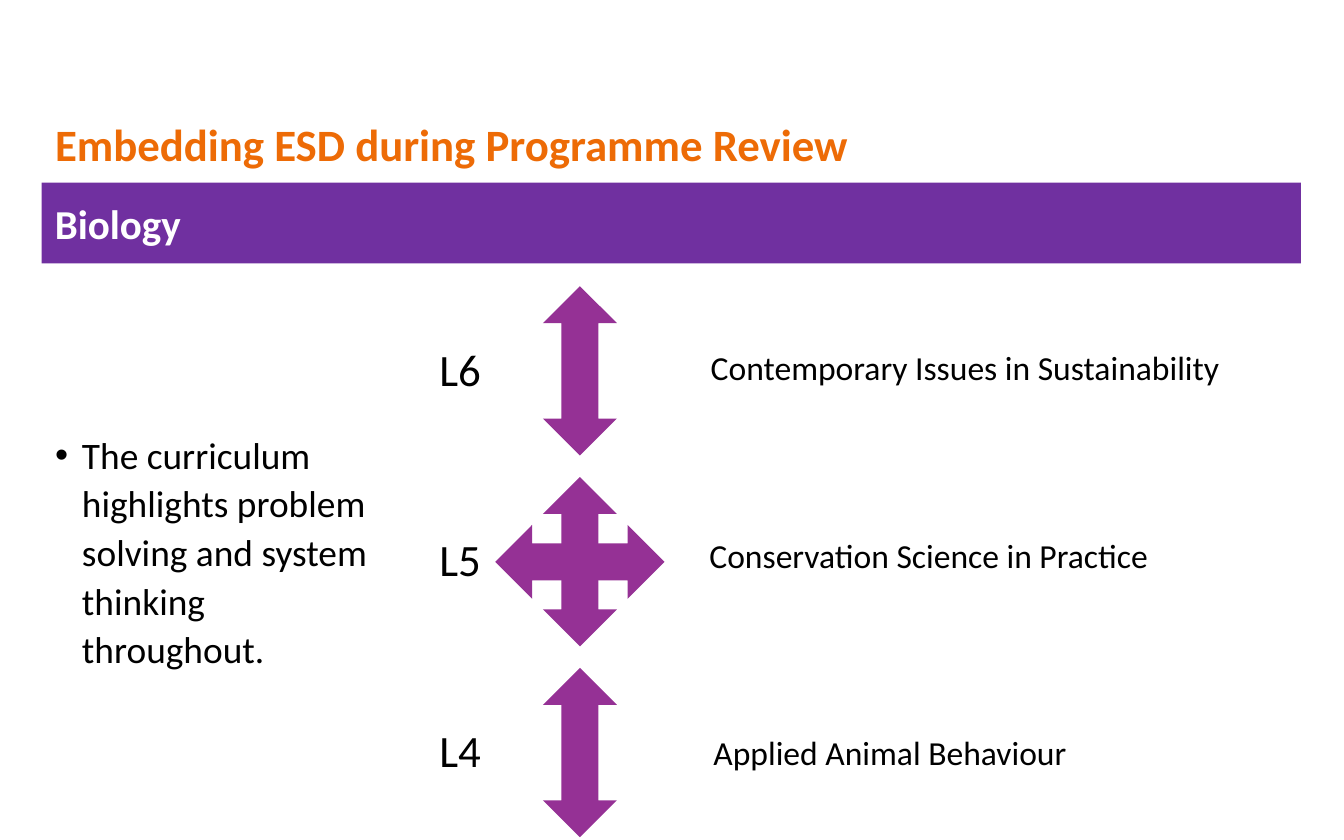
from dataclasses import dataclass

from lxml import etree
from pptx import Presentation
from pptx import util as u
from pptx.dml.color import RGBColor
from pptx.enum import shapes, text
from pptx.oxml import ns
from pptx.shapes.autoshape import Shape
from pptx.slide import Slide


@dataclass(frozen=True)
class Theme:
    font: str = "Calibri"
    orange: str = "ED6B06"
    purple: str = "7030A0"
    arrow: str = "953195"
    white: str = "FFFFFF"
    black: str = "000000"
    title_size: int = 24
    band_size: int = 22
    level_size: int = 24
    module_size: int = 18
    body_size: int = 20


@dataclass(frozen=True)
class Level:
    name: str
    module: str
    module_left: float
    module_top: float
    module_width: float
    sideways: bool = False


THEME = Theme()
LEVELS = [
    Level("L6", "Contemporary Issues in Sustainability", 5.19, 2.53, 4.03),
    Level("L5", "Conservation Science in Practice", 5.18, 3.93, 3.51, sideways=True),
    Level("L4", "Applied Animal Behaviour", 5.21, 5.4, 3.35),
]
LEVEL_PITCH = 1.42
FIRST_ARROW_TOP = 2.13
FIRST_NAME_TOP = 2.49


def place(shape: Shape, left: float, top: float, width: float, height: float) -> None:
    shape.left, shape.top = u.Inches(left), u.Inches(top)
    shape.width, shape.height = u.Inches(width), u.Inches(height)


def write(shape: Shape, words: str, size: int, color: str, bold: bool = False) -> None:
    """Set one left-aligned paragraph and format its run."""
    shape.text_frame.text = words
    para = shape.text_frame.paragraphs[0]
    para.alignment = text.PP_ALIGN.LEFT
    span = para.runs[0]
    span.font.name = THEME.font
    span.font.size = u.Pt(size)
    span.font.bold = bold
    span.font.color.rgb = RGBColor.from_string(color)


def add_filled(page: Slide, kind: shapes.MSO_SHAPE, left: float, top: float,
               width: float, height: float, color: str) -> Shape:
    shape = page.shapes.add_shape(kind, u.Inches(left), u.Inches(top),
                                  u.Inches(width), u.Inches(height))
    shape.shadow.inherit = False
    shape.fill.solid()
    shape.fill.fore_color.rgb = RGBColor.from_string(color)
    shape.line.fill.background()
    return shape


def add_arrow(page: Slide, top: float, rotation: int = 0) -> None:
    arrow = add_filled(page, shapes.MSO_SHAPE.UP_DOWN_ARROW, 4.04, top, 0.55, 1.26, THEME.arrow)
    arrow.adjustments[0] = 0.392
    arrow.adjustments[1] = 0.5
    arrow.rotation = rotation


def add_label(page: Slide, words: str, left: float, top: float,
              width: float, height: float, size: int) -> None:
    box = page.shapes.add_textbox(u.Inches(left), u.Inches(top), u.Inches(width), u.Inches(height))
    write(box, words, size, THEME.black)


def add_level(page: Slide, row: int, level: Level) -> None:
    offset = row * LEVEL_PITCH
    add_arrow(page, FIRST_ARROW_TOP + offset)
    if level.sideways:
        add_arrow(page, FIRST_ARROW_TOP + offset, rotation=270)
    add_label(page, level.name, 3.17, FIRST_NAME_TOP + offset, 0.51, 0.5, THEME.level_size)
    add_label(page, level.module, level.module_left, level.module_top,
              level.module_width, 0.4, THEME.module_size)


def fill_title(title: Shape) -> None:
    place(title, 0.31, 0.86, 8.62, 0.46)
    write(title, "Embedding ESD during Programme Review", THEME.title_size, THEME.orange, bold=True)
    title.text_frame.auto_size = text.MSO_AUTO_SIZE.NONE
    title.text_frame.vertical_anchor = text.MSO_ANCHOR.MIDDLE
    title.text_frame.paragraphs[0].line_spacing = 0.9


def fill_body(body: Shape) -> None:
    place(body, 0.31, 2.08, 2.59, 4.02)
    write(body, "The curriculum highlights problem solving and system thinking throughout.",
          THEME.body_size, THEME.black)
    body.text_frame.auto_size = text.MSO_AUTO_SIZE.NONE
    body.text_frame.vertical_anchor = text.MSO_ANCHOR.MIDDLE
    para = body.text_frame.paragraphs[0]
    para.line_spacing = u.Pt(26)
    para.space_before = u.Pt(0)
    properties = para._p.get_or_add_pPr()
    properties.set("marL", str(u.Inches(0.2)))
    properties.set("indent", str(u.Inches(-0.2)))
    etree.SubElement(properties, ns.qn("a:buFont"), typeface="Arial")
    etree.SubElement(properties, ns.qn("a:buChar"), char="•")


def add_band(page: Slide) -> None:
    band = add_filled(page, shapes.MSO_SHAPE.ROUNDED_RECTANGLE, 0.31, 1.36, 9.37, 0.6, THEME.purple)
    band.adjustments[0] = 0
    write(band, "Biology", THEME.band_size, THEME.white, bold=True)
    band.text_frame.vertical_anchor = text.MSO_ANCHOR.MIDDLE


def main() -> None:
    deck = Presentation()
    deck.slide_width, deck.slide_height = u.Inches(10), u.Inches(6.25)
    page = deck.slides.add_slide(deck.slide_layouts[1])
    fill_title(page.shapes.title)
    fill_body(page.placeholders[1])
    add_band(page)
    for row, level in enumerate(LEVELS):
        add_level(page, row, level)
    deck.save("out.pptx")


if __name__ == "__main__":
    main()
